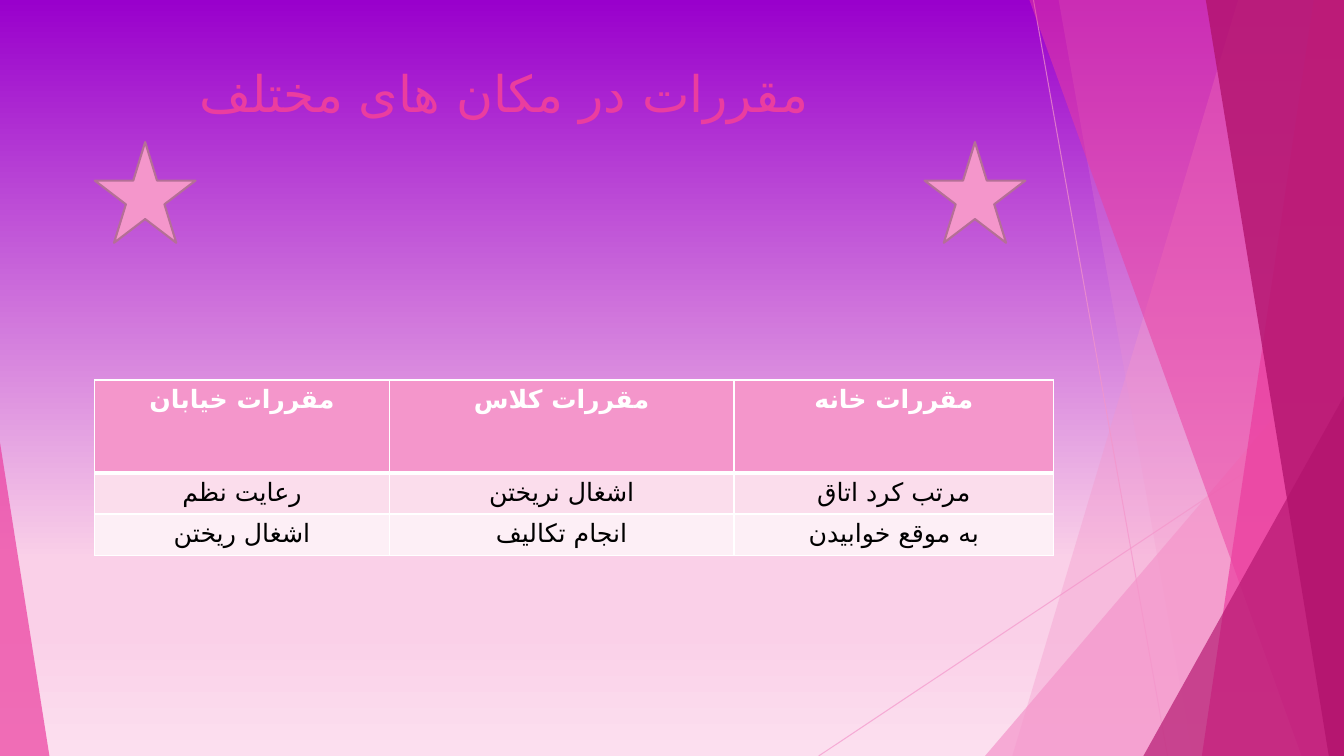
from lxml.etree import SubElement
from pptx import Presentation
from pptx.dml.color import RGBColor
from pptx.enum.shapes import MSO_CONNECTOR, MSO_SHAPE
from pptx.enum.text import MSO_ANCHOR, PP_ALIGN
from pptx.oxml import parse_xml
from pptx.oxml.ns import nsdecls, qn
from pptx.util import Inches, Pt

W, H = 13.33, 7.5
FONT, PERSIAN_FONT = "Cabin", "DejaVu Sans"
COLORS = {"pink": "F496CB", "magenta": "EB3D9F", "wine": "B2136D", "star_line": "B56F96",
          "white": "FFFFFF", "black": "000000", "odd_row": "FBDDEC", "even_row": "FDEFF6"}
BACKGROUND = [(0, "9900CC"), (74, "FAD0E8"), (83, "FAD0E8"), (100, "FCDFEF")]

TITLE = "مقررات در مکان های مختلف"
RULES = [
    ["مقررات خیابان", "مقررات کلاس", "مقررات خانه"],
    ["رعایت نظم", "اشغال نریختن", "مرتب کرد اتاق"],
    ["اشغال ریختن", "انجام تکالیف", "به موقع خوابیدن"],
]
COL_WIDTHS = [2.92, 3.42, 3.17]
ROW_HEIGHTS = [0.92, 0.41, 0.41]
ROW_FILLS = ["pink", "odd_row", "even_row"]

RAYS = [(10.25, 0, 11.58, H), (W, 4.03, 8.12, H)]
# Back to front: ("pane", top x, bottom x) reaches the right edge;
# ("triangle", left, top, width, apex) reaches the bottom edge.
FACETS = [
    (("pane", 12.28, 10.04), "pink", 36),
    (("pane", 10.5, 11.83), "pink", 20),
    (("triangle", 9.77, 3.33, 3.56, 1), "pink", 72),
    (("pane", 10.21, 12.91), "magenta", 50),
    (("pane", 13.03, 11.92), "magenta", 70),
    (("pane", 11.96, 13.18), "wine", 80),
    (("triangle", 11.34, 3.93, 1.99, 1), "wine", 66),
    (("triangle", 0, 4.39, 0.49, 0), "magenta", 70),
]
STAR_LEFTS = [9.17, 0.94]


def rgb(name):
    return RGBColor.from_string(COLORS[name])


def set_alpha(fill_parent, percent):
    color = next(fill_parent.iter(qn("a:srgbClr")))
    SubElement(color, qn("a:alpha")).set("val", str(percent * 1000))


def paint_background(slide):
    fill = slide.background.fill
    fill.gradient()
    fill.gradient_angle = 270
    stops = next(slide.element.iter(qn("a:gsLst")))
    for old in list(stops):
        stops.remove(old)
    for pos, color in BACKGROUND:
        gs = SubElement(stops, qn("a:gs"), pos=str(pos * 1000))
        SubElement(gs, qn("a:srgbClr"), val=color)


def add_ray(slide, ends):
    line = slide.shapes.add_connector(MSO_CONNECTOR.STRAIGHT, *map(Inches, ends))
    line.line.color.rgb = rgb("pink")
    line.line.width = Pt(0.75)
    props = line._element.spPr
    set_alpha(props, 70)
    SubElement(props, qn("a:effectLst"))


def add_facet(slide, geometry, color, alpha):
    kind, *values = geometry
    if kind == "pane":
        top_x, bottom_x = values
        corners = [(top_x, 0), (W, 0), (W, H), (bottom_x, H)]
        points = [(Inches(x), Inches(y)) for x, y in corners]
        builder = slide.shapes.build_freeform(*points[0])
        builder.add_line_segments(points[1:], close=True)
        sp = builder.convert_to_shape()
    else:
        left, top, width, apex = values
        sp = slide.shapes.add_shape(MSO_SHAPE.ISOSCELES_TRIANGLE, Inches(left), Inches(top),
                                    Inches(width), Inches(H - top))
        sp.adjustments[0] = apex
    sp.shadow.inherit = False
    sp.fill.solid()
    sp.fill.fore_color.rgb = rgb(color)
    sp.line.fill.background()
    set_alpha(sp._element.spPr, alpha)


def write(tf, text, size, color, bold=False):
    """Put one centred right-to-left paragraph in a text frame."""
    p = tf.paragraphs[0]
    p.text = text
    p.alignment = PP_ALIGN.CENTER
    p._p.get_or_add_pPr().set("rtl", "1")
    p.font.name, p.font.size, p.font.bold = FONT, Pt(size), bold
    p.font.color.rgb = rgb(color)
    SubElement(next(p._p.iter(qn("a:defRPr"))), qn("a:cs"), typeface=PERSIAN_FONT)


def set_borders(cell, row):
    widths = {"L": 1, "R": 1, "T": 3 if row == 1 else 1, "B": 3 if row == 0 else 1}
    props = cell._tc.get_or_add_tcPr()
    for i, (side, width) in enumerate(widths.items()):
        props.insert(i, parse_xml(
            f'<a:ln{side} {nsdecls("a")} w="{Pt(width)}"><a:solidFill>'
            f'<a:srgbClr val="{COLORS["white"]}"/></a:solidFill></a:ln{side}>'))


def add_rules_table(slide):
    table = slide.shapes.add_table(len(RULES), len(COL_WIDTHS), Inches(0.94), Inches(3.77),
                                   Inches(sum(COL_WIDTHS)), Inches(sum(ROW_HEIGHTS))).table
    for column, width in zip(table.columns, COL_WIDTHS):
        column.width = Inches(width)
    for r, texts in enumerate(RULES):
        table.rows[r].height = Inches(ROW_HEIGHTS[r])
        for c, text in enumerate(texts):
            cell = table.cell(r, c)
            cell.fill.solid()
            cell.fill.fore_color.rgb = rgb(ROW_FILLS[r])
            set_borders(cell, r)
            write(cell.text_frame, text, 18, "black" if r else "white", bold=r == 0)


def add_star(slide, left):
    sp = slide.shapes.add_shape(MSO_SHAPE.STAR_5_POINT, Inches(left), Inches(1.41),
                                Inches(1), Inches(1))
    sp.shadow.inherit = False
    sp.fill.solid()
    sp.fill.fore_color.rgb = rgb("pink")
    sp.line.color.rgb = rgb("star_line")
    sp.line.width = Pt(1.5)


def main():
    prs = Presentation()
    prs.slide_width, prs.slide_height = Inches(W), Inches(H)
    slide = prs.slides.add_slide(prs.slide_layouts[6])
    paint_background(slide)
    for ends in RAYS:
        add_ray(slide, ends)
    for facet in FACETS:
        add_facet(slide, *facet)
    title = slide.shapes.add_textbox(Inches(0.3), Inches(0.57), Inches(9.4), Inches(1.44))
    title.text_frame.word_wrap = True
    title.text_frame.vertical_anchor = MSO_ANCHOR.TOP
    write(title.text_frame, TITLE, 36, "magenta")
    add_rules_table(slide)
    for left in STAR_LEFTS:
        add_star(slide, left)
    prs.save("out.pptx")


if __name__ == "__main__":
    main()
